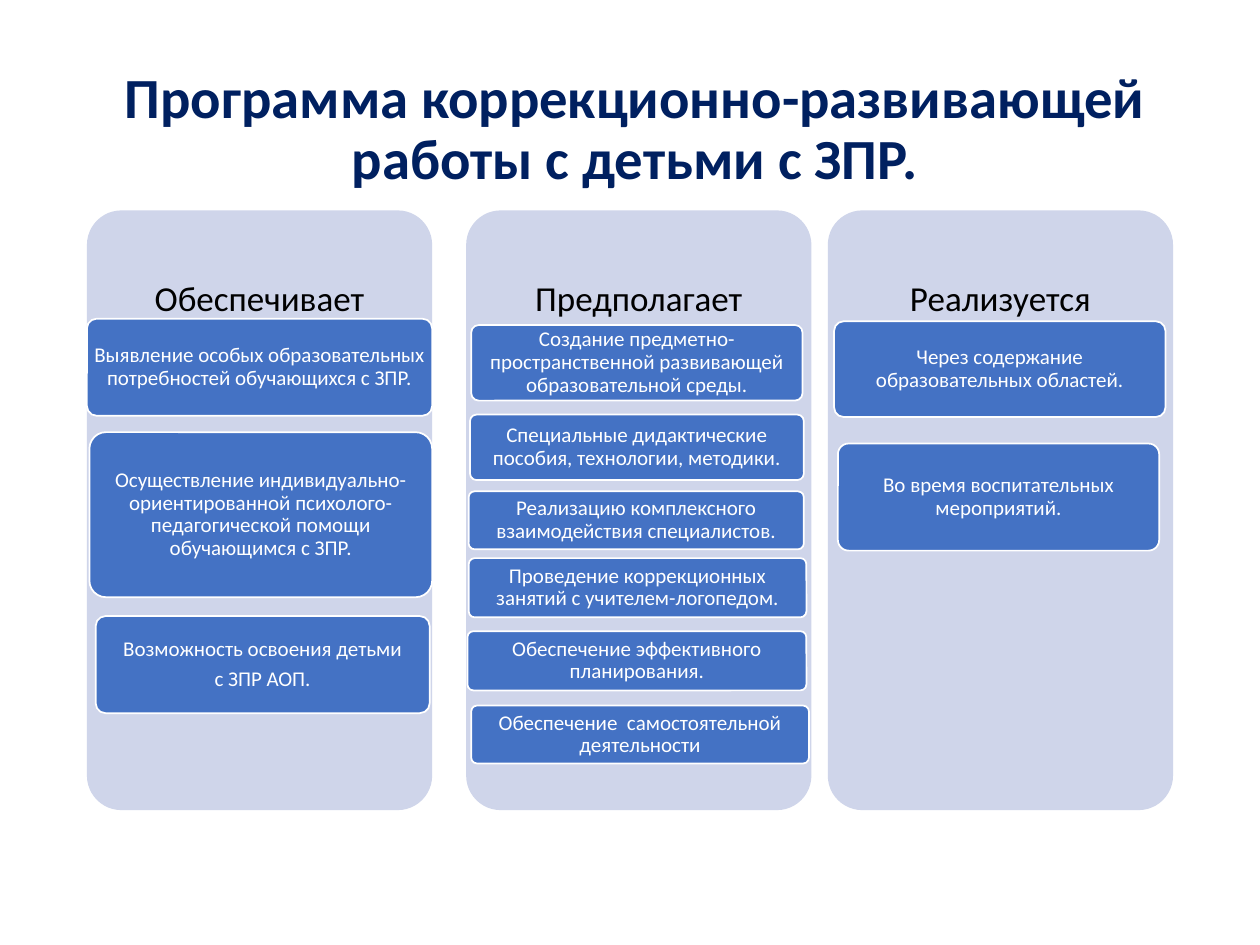
from collections import namedtuple

from pptx import Presentation
from pptx import util as u
from pptx.dml.color import RGBColor
from pptx.enum import shapes, text

COLORS = {
    "title": "002060",
    "panel": "CFD5EA",
    "card": "4472C4",
    "light": "FFFFFF",
    "dark": "000000",
}
FONT = "Calibri"
COLUMNS, ROWS = 1000, 750
SLIDE_W, SLIDE_H = u.Inches(10), u.Inches(7.5)
PANEL_TOP, PANEL_W, PANEL_H = 167, 274, 476
HEADING_H = 143

Box = namedtuple("Box", "left top width height")

TITLE = "Программа коррекционно-развивающей работы с детьми с ЗПР."
PANELS = [
    (69, "Обеспечивает", [
        (Box(0, 86, 274, 77), "Выявление особых образовательных потребностей обучающихся с ЗПР."),
        (Box(2, 176, 272, 131), "Осуществление индивидуально-ориентированной психолого-педагогической "
                                "помощи обучающимся с ЗПР."),
        (Box(7, 322, 265, 77), "Возможность освоения детьми\nс ЗПР АОП."),
    ]),
    (370, "Предполагает", [
        (Box(4, 91, 263, 60), "Создание предметно-пространственной развивающей образовательной среды."),
        (Box(3, 162, 265, 52), "Специальные дидактические пособия, технологии, методики."),
        (Box(2, 223, 266, 46), "Реализацию комплексного взаимодействия специалистов."),
        (Box(2, 276, 268, 47), "Проведение коррекционных занятий с учителем-логопедом."),
        (Box(1, 334, 269, 47), "Обеспечение эффективного планирования."),
        (Box(4, 393, 268, 46), "Обеспечение  самостоятельной деятельности"),
    ]),
    (657, "Реализуется", [
        (Box(5, 88, 263, 76), "Через содержание образовательных областей."),
        (Box(8, 185, 255, 85), "Во время воспитательных мероприятий."),
    ]),
]


def rgb(name):
    return RGBColor.from_string(COLORS[name])


def place(box):
    return (
        round(SLIDE_W * box.left / COLUMNS),
        round(SLIDE_H * box.top / ROWS),
        round(SLIDE_W * box.width / COLUMNS),
        round(SLIDE_H * box.height / ROWS),
    )


def write(shape, content, size, color, bold=False, after=0, inset=(0.1, 0.05)):
    frame = shape.text_frame
    frame.text = content
    frame.word_wrap = True
    frame.auto_size = text.MSO_AUTO_SIZE.NONE
    frame.vertical_anchor = text.MSO_ANCHOR.MIDDLE
    frame.margin_left = frame.margin_right = u.Inches(inset[0])
    frame.margin_top = frame.margin_bottom = u.Inches(inset[1])
    for paragraph in frame.paragraphs:
        paragraph.alignment = text.PP_ALIGN.CENTER
        paragraph.line_spacing = 0.9
        paragraph.space_before = u.Pt(0)
        paragraph.space_after = u.Pt(after)
        for run in paragraph.runs:
            run.font.name = FONT
            run.font.size = u.Pt(size)
            run.font.bold = bold
            run.font.color.rgb = rgb(color)


def add_rounded(slide, box, fill, outline=None):
    rounded = slide.shapes.add_shape(shapes.MSO_SHAPE.ROUNDED_RECTANGLE, *place(box))
    rounded.adjustments[0] = 0.1
    rounded.shadow.inherit = False
    rounded.fill.solid()
    rounded.fill.fore_color.rgb = rgb(fill)
    if outline:
        rounded.line.color.rgb = rgb(outline)
        rounded.line.width = u.Pt(1)
    else:
        rounded.line.fill.background()
    return rounded


def add_title(slide, box):
    title = slide.shapes.title
    title.left, title.top, title.width, title.height = place(box)
    write(title, TITLE, size=32.4, color="title", bold=True)


def add_panel(slide, box, heading, cards):
    add_rounded(slide, box, "panel")
    heading_box = slide.shapes.add_textbox(*place(box._replace(height=HEADING_H)))
    write(heading_box, heading, size=20, color="dark", inset=(0.08, 0.08))
    for offset, content in cards:
        card_box = offset._replace(left=box.left + offset.left, top=box.top + offset.top)
        card = add_rounded(slide, card_box, "card", outline="light")
        write(card, content, size=12, color="light", after=4.2, inset=(0.01, 0.01))


def main():
    deck = Presentation()
    deck.slide_width, deck.slide_height = SLIDE_W, SLIDE_H
    slide = deck.slides.add_slide(deck.slide_layouts[5])
    add_title(slide, Box(73, 53, 862, 101))
    for left, heading, cards in PANELS:
        add_panel(slide, Box(left, PANEL_TOP, PANEL_W, PANEL_H), heading, cards)
    deck.save("out.pptx")


if __name__ == "__main__":
    main()
